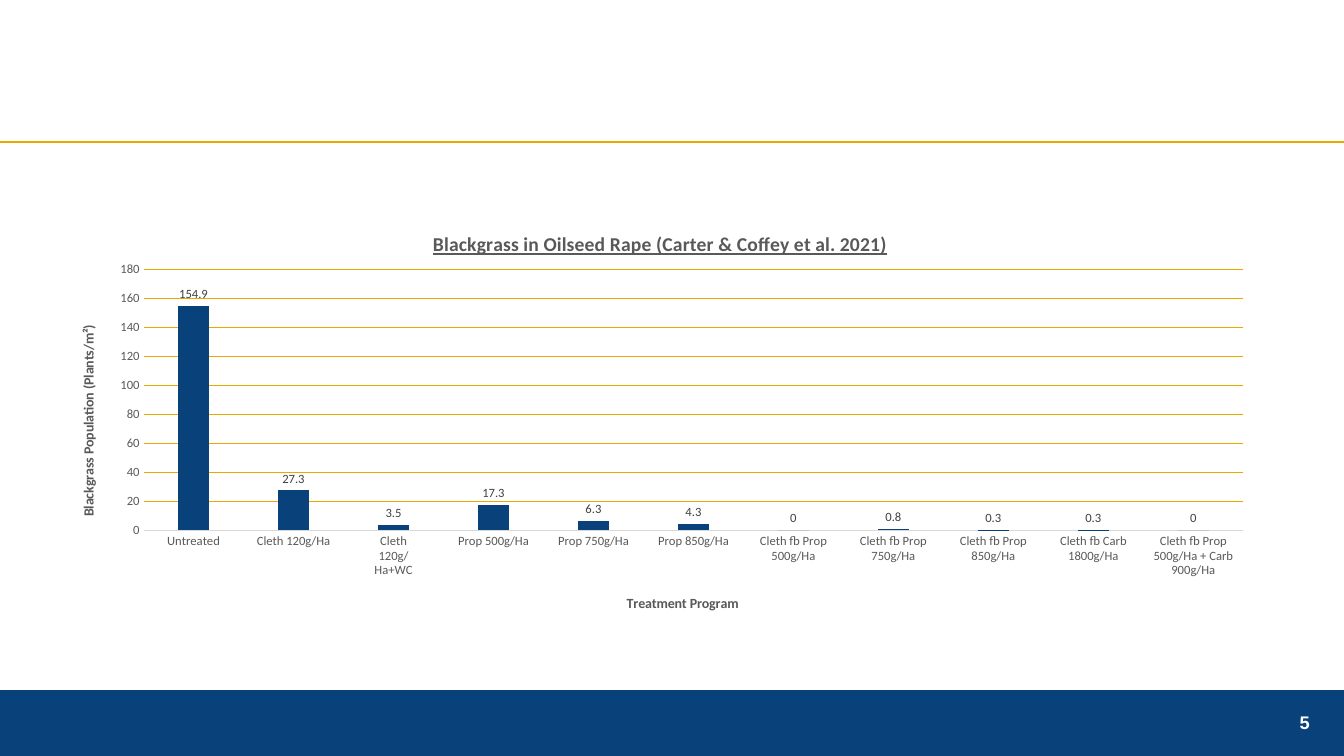
from lxml import etree
from pptx import Presentation
from pptx.chart.data import CategoryChartData
from pptx.dml.color import RGBColor
from pptx.enum.chart import XL_CHART_TYPE as ChartType
from pptx.enum.chart import XL_LABEL_POSITION as LabelPosition
from pptx.enum.chart import XL_TICK_MARK as TickMark
from pptx.enum.shapes import MSO_CONNECTOR as Connector
from pptx.enum.shapes import MSO_SHAPE as Shape
from pptx.enum.text import PP_ALIGN as Align
from pptx.oxml.ns import qn
from pptx.util import Pt

# Content
TITLE = "Blackgrass in Oilseed Rape (Carter & Coffey et al. 2021)"
CATEGORY_TITLE = "Treatment Program"
VALUE_TITLE = "Blackgrass Population (Plants/m²)"
PAGE_NUMBER = "5"
PLANTS = {
    "Untreated": 154.9,
    "Cleth 120g/Ha": 27.3,
    "Cleth 120g/Ha+WC": 3.5,
    "Prop 500g/Ha": 17.3,
    "Prop 750g/Ha": 6.3,
    "Prop 850g/Ha": 4.3,
    "Cleth fb Prop 500g/Ha": 0,
    "Cleth fb Prop 750g/Ha": 0.8,
    "Cleth fb Prop 850g/Ha": 0.3,
    "Cleth fb Carb 1800g/Ha": 0.3,
    "Cleth fb Prop 500g/Ha + Carb 900g/Ha": 0,
}

# Formats
NAVY, GOLD, GREY, PALE = "09417A", "E9AA00", "595959", "D9D9D9"
TITLE_FONT = {"name": "Calibri", "size": Pt(14), "bold": True, "underline": True}
AXIS_TITLE_FONT = {"name": "Calibri", "size": Pt(10), "bold": True}
TICK_FONT = {"name": "Calibri", "size": Pt(9), "bold": False}
NUMBER_FONT = {"name": "Arial", "size": Pt(13), "bold": True}


def color(value):
    return RGBColor.from_string(value)


def style_font(font, formats, fill):
    for name, value in formats.items():
        setattr(font, name, value)
    font.color.rgb = color(fill)


def style_line(line, fill, width):
    line.color.rgb = color(fill)
    line.width = Pt(width)


def place(element, index, **fractions):
    """Fix a chart part at fractions of the chart's width and height."""
    layout = element.find(qn("c:layout"))
    if layout is None:
        layout = etree.Element(qn("c:layout"))
        element.insert(index, layout)
    manual = etree.SubElement(layout, qn("c:manualLayout"))
    settings = {"xMode": "edge", "yMode": "edge", **fractions}
    if "w" in fractions:
        settings = {"layoutTarget": "inner", **settings}
    for name, value in settings.items():
        etree.SubElement(manual, qn(f"c:{name}")).set("val", str(value))


def write_title(title, text, formats, x, y):
    title.text_frame.text = text
    style_font(title.text_frame.paragraphs[0].runs[0].font, formats, GREY)
    place(title._element, 1, x=x, y=y)


deck = Presentation()
deck.slide_width, deck.slide_height = Pt(960), Pt(540)
page = deck.slides.add_slide(deck.slide_layouts[6])

# Footer band with page number
band = page.shapes.add_shape(Shape.RECTANGLE, Pt(0), Pt(493), Pt(960), Pt(47))
band.shadow.inherit = False
band.fill.solid()
band.fill.fore_color.rgb = color(NAVY)
band.line.fill.background()

box = page.shapes.add_textbox(Pt(606), Pt(504.7), Pt(336.5), Pt(23))
box.text_frame.word_wrap = True
para = box.text_frame.paragraphs[0]
para.alignment = Align.RIGHT
span = para.add_run()
span.text = PAGE_NUMBER
style_font(span.font, NUMBER_FONT, "FFFFFF")

# Header rule
rule = page.shapes.add_connector(
    Connector.STRAIGHT, Pt(-7), Pt(101.5), Pt(965.5), Pt(101.5))
style_line(rule.line, GOLD, 2)
etree.SubElement(rule._element.spPr, qn("a:effectLst"))

# Chart
data = CategoryChartData()
data.categories = list(PLANTS)
data.add_series("Series 1", list(PLANTS.values()))
chart = page.shapes.add_chart(
    ChartType.COLUMN_CLUSTERED, Pt(37.4), Pt(146.9), Pt(869), Pt(303), data).chart
chart.has_legend = False
style_font(chart.font, {"name": "Calibri", "size": Pt(10)}, "000000")
chart.has_title = True
write_title(chart.chart_title, TITLE, TITLE_FONT, 0.31, 0.05)
place(chart._chartSpace.chart.plotArea, 0, x=0.075, y=0.15, w=0.904, h=0.615)

# Columns and their labels
plot = chart.plots[0]
plot.gap_width, plot.overlap, plot.vary_by_categories = 219, -27, False
columns = plot.series[0].format
columns.fill.solid()
columns.fill.fore_color.rgb = color(NAVY)
plot.has_data_labels = True
labels = plot.data_labels
labels.show_value = True
labels.position = LabelPosition.OUTSIDE_END
style_font(labels.font, TICK_FONT, "404040")

# Axes
for axis, text, x, y in (
    (chart.category_axis, CATEGORY_TITLE, 0.47, 0.91),
    (chart.value_axis, VALUE_TITLE, 0.02, 0.275),
):
    axis.major_tick_mark = axis.minor_tick_mark = TickMark.NONE
    style_font(axis.tick_labels.font, TICK_FONT, GREY)
    write_title(axis.axis_title, text, AXIS_TITLE_FONT, x, y)

style_line(chart.category_axis.format.line, PALE, 0.75)
values = chart.value_axis
values.minimum_scale, values.maximum_scale, values.major_unit = 0, 180, 20
values.format.line.fill.background()
values.has_major_gridlines = True
style_line(values.major_gridlines.format.line, GOLD, 0.75)

deck.save("out.pptx")
